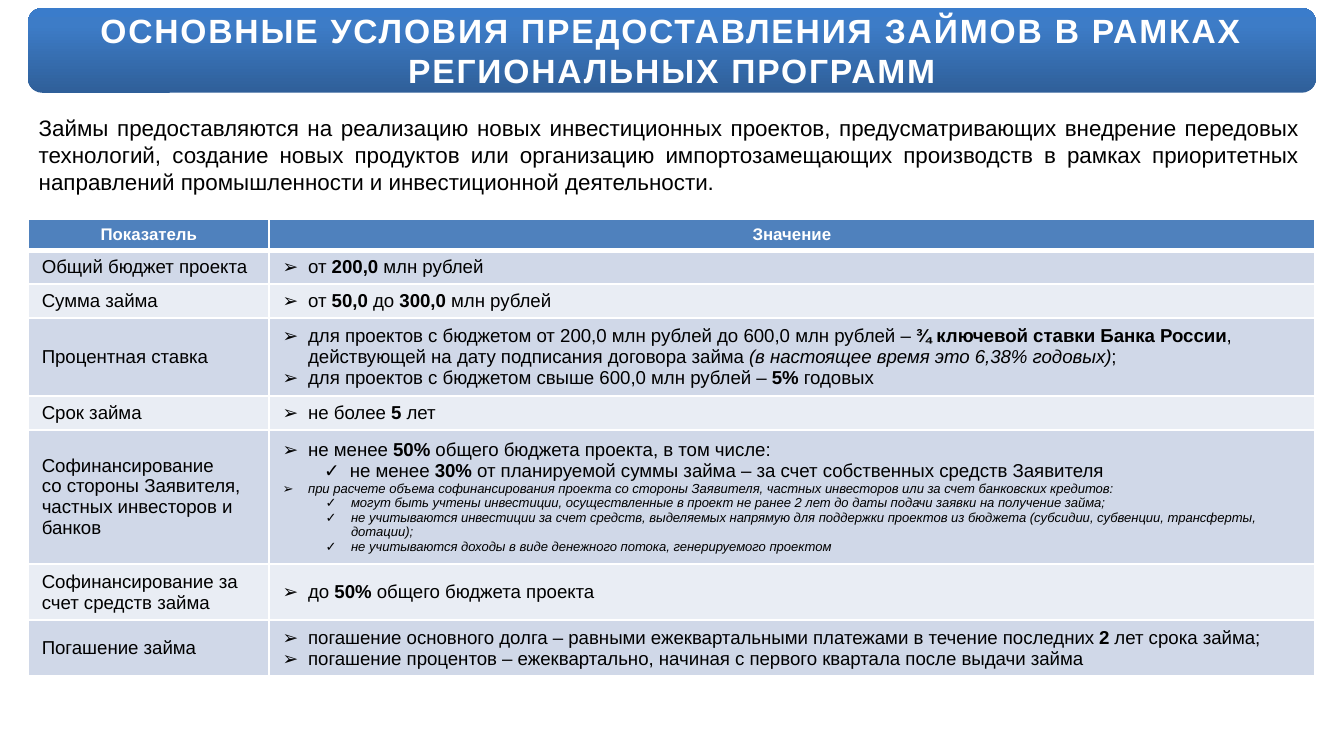
import lxml.etree
import pptx
import pptx.dml.color
import pptx.enum.shapes
import pptx.enum.text
import pptx.oxml
import pptx.oxml.ns
import pptx.util

Pt = pptx.util.Pt
Align = pptx.enum.text.PP_ALIGN
Anchor = pptx.enum.text.MSO_ANCHOR
qn = pptx.oxml.ns.qn

TITLE = "ОСНОВНЫЕ УСЛОВИЯ ПРЕДОСТАВЛЕНИЯ ЗАЙМОВ В РАМКАХ РЕГИОНАЛЬНЫХ ПРОГРАММ"
INTRO = (
    "Займы предоставляются на реализацию новых инвестиционных проектов, "
    "предусматривающих внедрение передовых технологий, создание новых продуктов "
    "или организацию импортозамещающих производств в рамках приоритетных "
    "направлений промышленности и инвестиционной деятельности."
)
LEVELS = {
    "main": ("➢", 13.7, 10),
    "sub": ("✓", 36, 10),
    "note": ("➢", 13.7, 7),
    "subnote": ("✓", 36.7, 7),
}
CONDITIONS = [
    (17.7, ["Общий бюджет проекта"], [("main", "от *200,0 *млн рублей")]),
    (17.7, ["Сумма займа"], [("main", "от *50,0* до *300,0* млн рублей")]),
    (41.2, ["Процентная ставка"], [
        ("main", "для проектов с бюджетом от 200,0 млн рублей до 600,0 млн рублей – "
                 "*¾ ключевой ставки Банка России*, действующей на дату подписания "
                 "договора займа _(в настоящее время это 6,38% годовых)_;"),
        ("main", "для проектов с бюджетом свыше 600,0 млн рублей – *5%* годовых"),
    ]),
    (17.4, ["Срок займа"], [("main", "не более *5* лет")]),
    (71.5, ["Софинансирование", "со стороны Заявителя, частных инвесторов и банков"], [
        ("main", "не менее *50%* общего бюджета проекта, в том числе:"),
        ("sub", "не менее *30%* от планируемой суммы займа – за счет собственных "
                "средств Заявителя"),
        ("note", "_при расчете объема софинансирования проекта со стороны Заявителя, "
                 "частных инвесторов или за счет банковских кредитов:_"),
        ("subnote", "_могут быть учтены инвестиции, осуществленные в проект не ранее "
                    "2 лет до даты подачи заявки на получение займа;_"),
        ("subnote", "_не учитываются инвестиции за счет средств, выделяемых напрямую для "
                    "поддержки проектов из бюджета (субсидии, субвенции, трансферты, "
                    "дотации);_"),
        ("subnote", "_не учитываются доходы в виде денежного потока, генерируемого "
                    "проектом_"),
    ]),
    (29.5, ["Софинансирование за счет средств займа"],
     [("main", "до *50%* общего бюджета проекта")]),
    (29.5, ["Погашение займа"], [
        ("main", "погашение основного долга – равными ежеквартальными платежами в течение "
                 "последних *2* лет срока займа;"),
        ("main", "погашение процентов – ежеквартально, начиная с первого квартала после "
                 "выдачи займа"),
    ]),
]


def color(value):
    return pptx.dml.color.RGBColor.from_string(value)


class SlideBuilder:
    font = "Arial"
    ink = "000000"
    white = "FFFFFF"
    header_fill = "4F81BD"
    bands = ("D0D8E8", "E9EDF4")
    banner_stops = ((0, "2F5F99"), (80, "3D7CC7"), (100, "3A7CCB"))

    def __init__(self, page):
        self.page = page

    def style(self, span, size, ink, bold=False, italic=False):
        span.font.name = self.font
        span.font.size = Pt(size)
        span.font.bold = bold
        span.font.italic = italic
        span.font.color.rgb = color(ink)

    def rich_text(self, para, text, size, ink):
        for i, part in enumerate(text.split("*")):
            for j, piece in enumerate(part.split("_")):
                if piece:
                    span = para.add_run()
                    span.text = piece
                    self.style(span, size, ink, i % 2 == 1, j % 2 == 1)

    def bullet(self, para, mark, indent):
        properties = para._p.get_or_add_pPr()
        properties.set("marL", str(Pt(indent)))
        properties.set("indent", str(-Pt(13.7)))
        lxml.etree.SubElement(properties, qn("a:buFont")).set("typeface", self.font)
        lxml.etree.SubElement(properties, qn("a:buChar")).set("char", mark)

    def banner(self, left, top, width, height, text):
        box = self.page.shapes.add_shape(
            pptx.enum.shapes.MSO_SHAPE.ROUNDED_RECTANGLE,
            Pt(left), Pt(top), Pt(width), Pt(height))
        box.shadow.inherit = False
        box.line.fill.background()
        box.fill.gradient()
        box.fill.gradient_angle = 90
        stops = box._element.spPr.find(".//" + qn("a:gsLst"))
        stops.clear()
        for position, value in self.banner_stops:
            stop = lxml.etree.SubElement(stops, qn("a:gs"), pos=str(position * 1000))
            lxml.etree.SubElement(stop, qn("a:srgbClr"), val=value)
        frame = box.text_frame
        frame.text = text
        frame.word_wrap = True
        frame.vertical_anchor = Anchor.MIDDLE
        para = frame.paragraphs[0]
        para.alignment = Align.CENTER
        self.style(para.runs[0], 18, self.white, bold=True)
        para.runs[0].font._element.set("spc", "100")

    def body(self, left, top, width, height, text):
        box = self.page.shapes.add_textbox(Pt(left), Pt(top), Pt(width), Pt(height))
        frame = box.text_frame
        frame.word_wrap = True
        frame.text = text
        para = frame.paragraphs[0]
        para.alignment = Align.JUSTIFY
        para.space_after = Pt(3)
        self.style(para.runs[0], 12, self.ink)

    def cell(self, cell, fill, top=1, bottom=1):
        properties = cell._tc.get_or_add_tcPr()
        for side, width in (("L", 1), ("R", 1), ("T", top), ("B", bottom)):
            line = lxml.etree.SubElement(properties, qn("a:ln" + side), w=str(Pt(width)))
            solid = lxml.etree.SubElement(line, qn("a:solidFill"))
            lxml.etree.SubElement(solid, qn("a:srgbClr"), val=self.white)
        cell.fill.solid()
        cell.fill.fore_color.rgb = color(fill)
        cell.vertical_anchor = Anchor.MIDDLE
        cell.margin_left = cell.margin_right = Pt(7.2)
        cell.margin_top = cell.margin_bottom = Pt(3)

    def table(self, left, top, widths, header_height, headers, rows):
        heights = [header_height] + [row[0] for row in rows]
        table = self.page.shapes.add_table(
            len(heights), len(widths), Pt(left), Pt(top),
            Pt(sum(widths)), Pt(sum(heights))).table
        for column, width in zip(table.columns, widths):
            column.width = Pt(width)
        for row, height in zip(table.rows, heights):
            row.height = Pt(height)
        for index, text in enumerate(headers):
            cell = table.cell(0, index)
            self.cell(cell, self.header_fill, bottom=3)
            cell.text_frame.text = text
            para = cell.text_frame.paragraphs[0]
            para.alignment = Align.CENTER
            self.style(para.runs[0], 9, self.white, bold=True)
        for index, (_, names, values) in enumerate(rows, 1):
            label, value = table.cell(index, 0), table.cell(index, 1)
            for cell in (label, value):
                self.cell(cell, self.bands[(index - 1) % 2], top=3 if index == 1 else 1)
            label.text_frame.text = "\n".join(names)
            for para in label.text_frame.paragraphs:
                self.style(para.runs[0], 10, self.ink)
            for number, (level, text) in enumerate(values):
                frame = value.text_frame
                para = frame.add_paragraph() if number else frame.paragraphs[0]
                mark, indent, size = LEVELS[level]
                self.bullet(para, mark, indent)
                self.rich_text(para, text, size, self.ink)


def main():
    deck = pptx.Presentation()
    deck.slide_width, deck.slide_height = Pt(720), Pt(405)
    builder = SlideBuilder(deck.slides.add_slide(deck.slide_layouts[6]))
    builder.banner(15, 4.3, 690, 45.4, TITLE)
    builder.body(13.7, 57.6, 690, 51, INTRO)
    builder.table(15.2, 117.4, (129, 560), 16.1, ("Показатель", "Значение"), CONDITIONS)
    deck.save("out.pptx")


if __name__ == "__main__":
    main()
